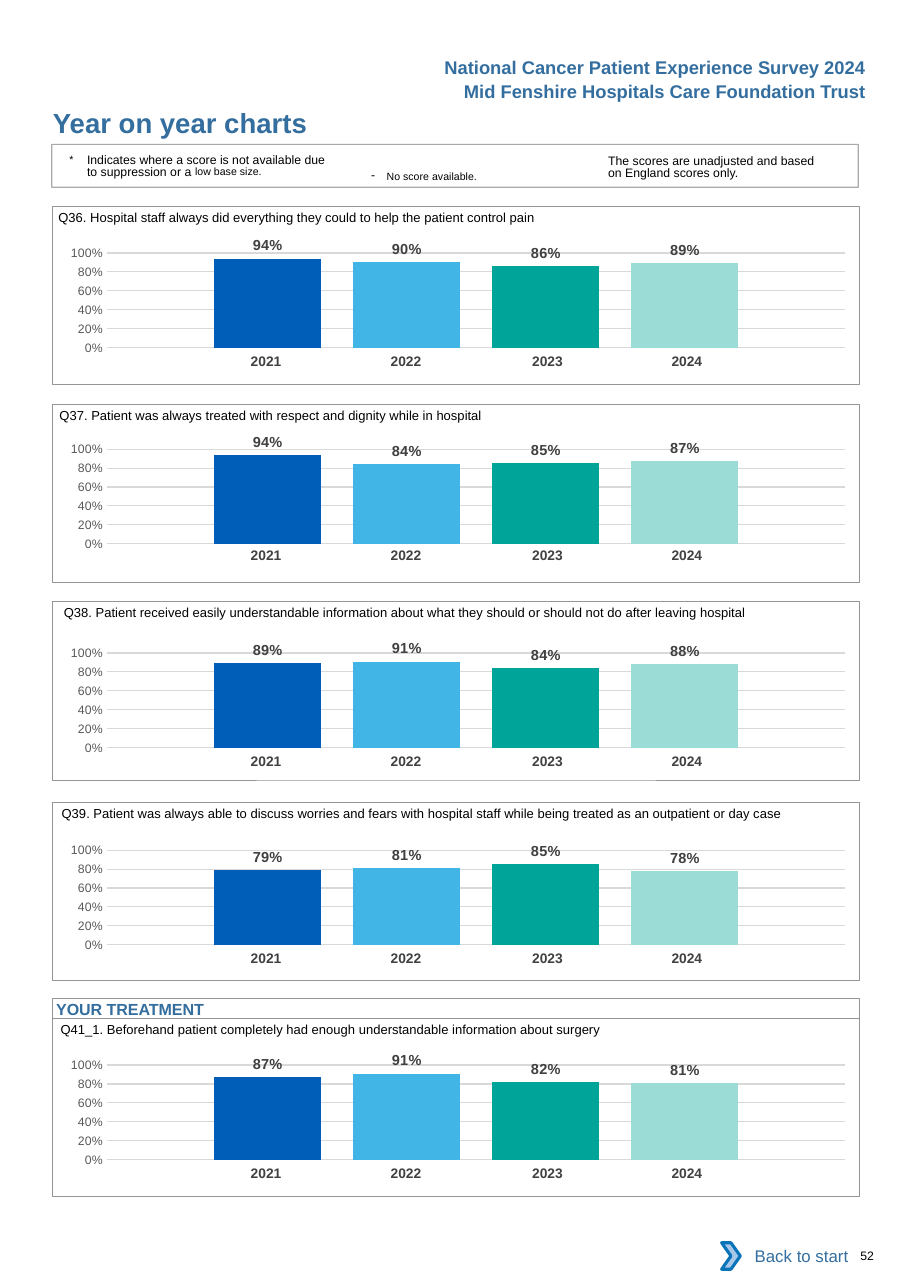
from lxml.etree import SubElement
from pptx import Presentation
from pptx.chart.data import CategoryChartData
from pptx.dml.color import RGBColor
from pptx.enum.chart import XL_CHART_TYPE, XL_LABEL_POSITION, XL_TICK_MARK
from pptx.enum.shapes import MSO_SHAPE
from pptx.enum.text import MSO_ANCHOR, PP_ALIGN
from pptx.oxml import parse_xml
from pptx.oxml.ns import nsdecls, qn
from pptx.util import Pt

PX = 9144
BLUE = RGBColor(0x33, 0x6E, 0x9F)
BLACK = RGBColor(0, 0, 0)
WHITE = RGBColor(0xFF, 0xFF, 0xFF)
FRAME = RGBColor(0x93, 0x95, 0x98)
YEAR = RGBColor(0x41, 0x40, 0x42)
AXIS = RGBColor(0x59, 0x59, 0x59)
GRID = RGBColor(0xD9, 0xD9, 0xD9)
VALUE = RGBColor(0x40, 0x40, 0x40)
CHEVRON_FILL = RGBColor(0xA8, 0xC7, 0xE9)
CHEVRON_LINE = RGBColor(0x0A, 0x74, 0xBB)
BARS = [RGBColor(0x00, 0x5E, 0xB8), RGBColor(0x41, 0xB6, 0xE6),
        RGBColor(0x00, 0xA4, 0x99), RGBColor(0x9C, 0xDC, 0xD7)]
YEARS = ["2021", "2022", "2023", "2024"]
YEAR_COLUMNS = [(127, 0), (127, 0), (134, 4), (127, 12)]

PANELS = [
    ("Q36. Hospital staff always did everything they could to help the patient control pain",
     53, 187, 211, 316, (0.94, 0.90, 0.86, 0.89)),
    ("Q37. Patient was always treated with respect and dignity while in hospital",
     54, 367, 389, 492, (0.94, 0.84, 0.85, 0.87)),
    ("Q38. Patient received easily understandable information about what they should "
     "or should not do after leaving hospital",
     58, 546, 574, 679, (0.89, 0.91, 0.84, 0.88)),
    ("Q39. Patient was always able to discuss worries and fears with hospital staff "
     "while being treated as an outpatient or day case",
     56, 728, 753, 858, (0.79, 0.81, 0.85, 0.78)),
    ("Q41_1. Beforehand patient completely had enough understandable information about surgery",
     55, 924, 948, 1053, (0.87, 0.91, 0.82, 0.81)),
]

prs = Presentation()
prs.slide_width, prs.slide_height = 826 * PX, 1169 * PX
s = prs.slides.add_slide(prs.slide_layouts[5])


def write(sp, parts, size, color=BLACK, bold=False, align=PP_ALIGN.LEFT):
    tf = sp.text_frame
    tf.word_wrap = True
    tf.margin_left = tf.margin_right = tf.margin_top = tf.margin_bottom = 0
    tf.vertical_anchor = MSO_ANCHOR.TOP
    p = tf.paragraphs[0]
    p.alignment = align
    for text, baseline in parts:
        r = p.add_run()
        r.text = text
        r.font.name, r.font.bold = "Arial", bold
        r.font.size = Pt(12 if baseline else size)
        r.font.color.rgb = color
        if baseline:
            r.font._element.set("baseline", str(baseline))
    return p


def outline(x, y, w, h, width=0.5):
    sp = s.shapes.add_shape(MSO_SHAPE.RECTANGLE, x * PX, y * PX, w * PX, h * PX)
    sp.shadow.inherit = False
    sp.fill.background()
    sp.line.color.rgb = FRAME
    sp.line.width = Pt(width)
    return sp


title = s.shapes.title
title.left, title.top, title.width, title.height = 48 * PX, 96 * PX, 450 * PX, 30 * PX
write(title, [("Year on year charts", 0)], 18, BLUE, True)

for text, y in [("National Cancer Patient Experience Survey 2024", 51),
                ("Mid Fenshire Hospitals Care Foundation Trust", 73)]:
    tb = s.shapes.add_textbox(376 * PX, y * PX, 410 * PX, 20 * PX)
    write(tb, [(text, 0)], 12, BLUE, True, PP_ALIGN.RIGHT)

key_frame = outline(47, 131, 732, 39, 0.75)
key_color = key_frame.line._ln.find(".//" + qn("a:srgbClr"))
SubElement(key_color, qn("a:alpha"), val="80000")

tb = s.shapes.add_textbox(63 * PX, 141 * PX, 239 * PX, 26 * PX)
p = write(tb, [("*\t", 3000),
               ("Indicates where a score is not available due to suppression or a ", 0),
               ("low base size.", 7000)], 8)
p.line_spacing = Pt(8.1)
p._p.get_or_add_pPr().set("marL", str(16 * PX))
p._p.get_or_add_pPr().set("indent", str(-16 * PX))

for text, x, baseline in [("-", 337, 0), ("No score available.", 351, 3000)]:
    tb = s.shapes.add_textbox(x * PX, (148 if baseline else 152) * PX, 150 * PX, 19 * PX)
    write(tb, [(text, baseline)], 8)

tb = s.shapes.add_textbox(552 * PX, 141 * PX, 201 * PX, 24 * PX)
p = write(tb, [("The scores are unadjusted and based on England scores only.", 0)], 8)
p.line_spacing = Pt(8.1)

for question, x, top, chart_top, years_top, scores in PANELS:
    gf = s.shapes.add_table(1, 4, 173 * PX, years_top * PX, 515 * PX, 27 * PX)
    table = gf.table
    table.first_row = table.horz_banding = False
    table._tbl.tblPr.find(qn("a:tableStyleId")).text = "{2D5ABB26-0587-4C30-8999-92F81FD0307C}"
    table.rows[0].height = 27 * PX
    for i, (width, right) in enumerate(YEAR_COLUMNS):
        table.columns[i].width = width * PX
        cell = table.cell(0, i)
        cell.fill.background()
        cell.margin_left, cell.margin_right = 10 * PX, right * PX
        cell.margin_top = cell.margin_bottom = 5 * PX
        cell.text_frame.text = YEARS[i]
        p = cell.text_frame.paragraphs[0]
        p.alignment = PP_ALIGN.CENTER
        font = p.runs[0].font
        font.name, font.size, font.bold = "Arial", Pt(9), True
        font.color.rgb = YEAR

    data = CategoryChartData(number_format="0%")
    data.categories = ["1"]
    for i, score in enumerate(scores, 1):
        data.add_series(f"Series {i}", [score])
    chart = s.shapes.add_chart(XL_CHART_TYPE.COLUMN_CLUSTERED, 39 * PX, chart_top * PX,
                               732 * PX, 129 * PX, data).chart
    chart.has_legend = chart.has_title = False
    chart.font.name, chart.font.size = "Calibri", Pt(10)
    chart.font.color.rgb = BLACK
    chart.category_axis.visible = False
    axis = chart.value_axis
    axis.minimum_scale, axis.maximum_scale, axis.major_unit = 0, 1, 0.2
    axis.major_tick_mark = axis.minor_tick_mark = XL_TICK_MARK.NONE
    axis.format.line.fill.background()
    axis.major_gridlines.format.line.color.rgb = GRID
    axis.major_gridlines.format.line.width = Pt(0.75)
    axis.tick_labels.number_format = "0%"
    axis.tick_labels.number_format_is_linked = False
    font = axis.tick_labels.font
    font.name, font.size = "Arial", Pt(8)
    font.color.rgb = AXIS
    plot = chart.plots[0]
    plot.vary_by_categories = False
    plot.gap_width, plot.overlap = 200, -30
    for series, color in zip(plot.series, BARS):
        series.format.fill.solid()
        series.format.fill.fore_color.rgb = color
        labels = series.data_labels
        labels.show_value = True
        labels.position = XL_LABEL_POSITION.OUTSIDE_END
        labels.number_format, labels.number_format_is_linked = "0%", False
        labels.font.name, labels.font.size, labels.font.bold = "Arial", Pt(9.5), True
        labels.font.color.rgb = VALUE
    area = chart._chartSpace.chart.plotArea
    for old in area.findall(qn("c:layout")):
        area.remove(old)
    area.insert(0, parse_xml(
        f'<c:layout {nsdecls("c")}><c:manualLayout><c:layoutTarget val="inner"/>'
        '<c:xMode val="edge"/><c:yMode val="edge"/><c:x val="0.08"/><c:y val="0.145"/>'
        '<c:w val="0.915"/><c:h val="0.666"/></c:manualLayout></c:layout>'))

    outline(48, top, 732, 162)
    tb = s.shapes.add_textbox(x * PX, (top + 3) * PX, 724 * PX, 15 * PX)
    write(tb, [(question, 0)], 8.5)

section = outline(48, 906, 732, 18)
write(section, [("YOUR TREATMENT", 0)], 10.5, BLUE, True)
section.text_frame.margin_left, section.text_frame.margin_top = 3 * PX, PX

back = s.shapes.add_shape(MSO_SHAPE.RECTANGLE, 662 * PX, 1119 * PX, 118 * PX, 42 * PX)
back.shadow.inherit = False
back.fill.solid()
back.fill.fore_color.rgb = WHITE
back.line.fill.background()
write(back, [("Back to start", 0)], 11, BLUE, align=PP_ALIGN.RIGHT)
back.text_frame.margin_right = 10 * PX
back.text_frame.vertical_anchor = MSO_ANCHOR.MIDDLE

chevron = s.shapes.add_shape(MSO_SHAPE.CHEVRON, 655 * PX, 1128 * PX, 17 * PX, 24 * PX)
chevron.shadow.inherit = False
chevron.fill.solid()
chevron.fill.fore_color.rgb = CHEVRON_FILL
chevron.line.color.rgb = CHEVRON_LINE
chevron.line.width = Pt(2)

tb = s.shapes.add_textbox(781 * PX, 1133 * PX, 40 * PX, 13 * PX)
write(tb, [("52", 0)], 8)

prs.save("out.pptx")
